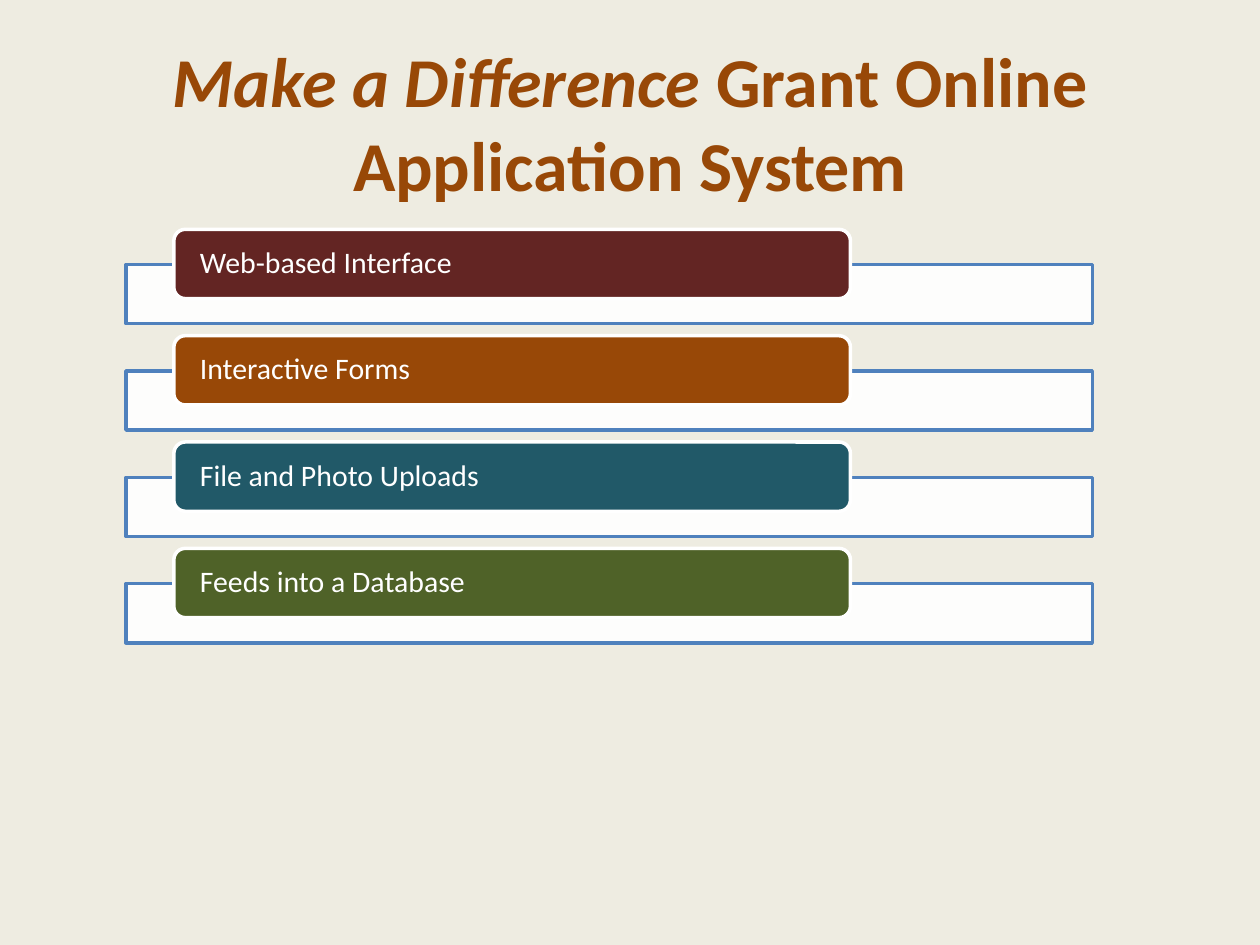
from dataclasses import dataclass

from lxml.etree import SubElement
from pptx import Presentation
from pptx.dml.color import RGBColor as RGB
from pptx.enum.shapes import MSO_SHAPE as Kind
from pptx.enum.text import MSO_ANCHOR as Anchor, PP_ALIGN as Align
from pptx.oxml.ns import qn
from pptx.shapes.autoshape import Shape
from pptx.util import Inches, Pt

# Colours
CREAM = RGB(0xEE, 0xEC, 0xE1)
WHITE = RGB(0xFF, 0xFF, 0xFF)
BLUE = RGB(0x4F, 0x81, 0xBD)
WINE = RGB(0x63, 0x25, 0x23)
RUST = RGB(0x98, 0x48, 0x07)
TEAL = RGB(0x21, 0x59, 0x68)
OLIVE = RGB(0x4F, 0x62, 0x28)

# Row grid, in inches
FONT = "Calibri"
TOP, PITCH = 1.82, 0.844
DROP = 0.28  # from the top of a label to the top of its panel


@dataclass
class Row:
    text: str
    fill: RGB


ROWS = [
    Row("Web-based Interface", WINE),
    Row("Interactive Forms", RUST),
    Row("File and Photo Uploads", TEAL),
    Row("Feeds into a Database", OLIVE),
]


def style(run, size: float, color: RGB) -> None:
    run.font.name = FONT
    run.font.size = Pt(size)
    run.font.color.rgb = color


def add_box(slide, kind: Kind, box: tuple, fill: RGB, line: RGB) -> Shape:
    shape = slide.shapes.add_shape(kind, *map(Inches, box))
    shape.shadow.inherit = False
    shape.fill.solid()
    shape.fill.fore_color.rgb = fill
    shape.line.color.rgb = line
    shape.line.width = Pt(2)
    return shape


def add_row(slide, row: Row, top: float) -> None:
    # Panel, 90% opaque
    panel = add_box(slide, Kind.RECTANGLE, (1, top + DROP, 7.67, 0.47), WHITE, BLUE)
    tint = panel.fill._xPr.find(qn("a:solidFill"))[0]
    SubElement(tint, qn("a:alpha"), val="90000")

    # Label over the panel
    label = add_box(slide, Kind.ROUNDED_RECTANGLE, (1.38, top, 5.37, 0.55), row.fill, WHITE)
    frame = label.text_frame
    frame.text = row.text
    frame.word_wrap = True
    frame.vertical_anchor = Anchor.MIDDLE
    frame.margin_left = frame.margin_right = Inches(0.18)
    frame.margin_top = frame.margin_bottom = 0
    para = frame.paragraphs[0]
    para.alignment = Align.LEFT
    para.line_spacing = 0.9
    style(para.runs[0], 17, WHITE)


def add_title(slide) -> None:
    frame = slide.shapes.add_textbox(0, Inches(0.25), Inches(10), Inches(1.45)).text_frame
    frame.word_wrap = True
    para = frame.paragraphs[0]
    para.alignment = Align.CENTER
    for text, slant in (("Make a Difference ", True), ("Grant Online Application System", False)):
        run = para.add_run()
        run.text = text
        style(run, 40, RUST)
        run.font.bold = True
        run.font.italic = slant


def main() -> None:
    deck = Presentation()
    deck.slide_width, deck.slide_height = Inches(10), Inches(7.5)
    slide = deck.slides.add_slide(deck.slide_layouts[6])
    back = slide.background.fill
    back.solid()
    back.fore_color.rgb = CREAM

    for i, row in enumerate(ROWS):
        add_row(slide, row, TOP + i * PITCH)
    add_title(slide)
    deck.save("out.pptx")


if __name__ == "__main__":
    main()
